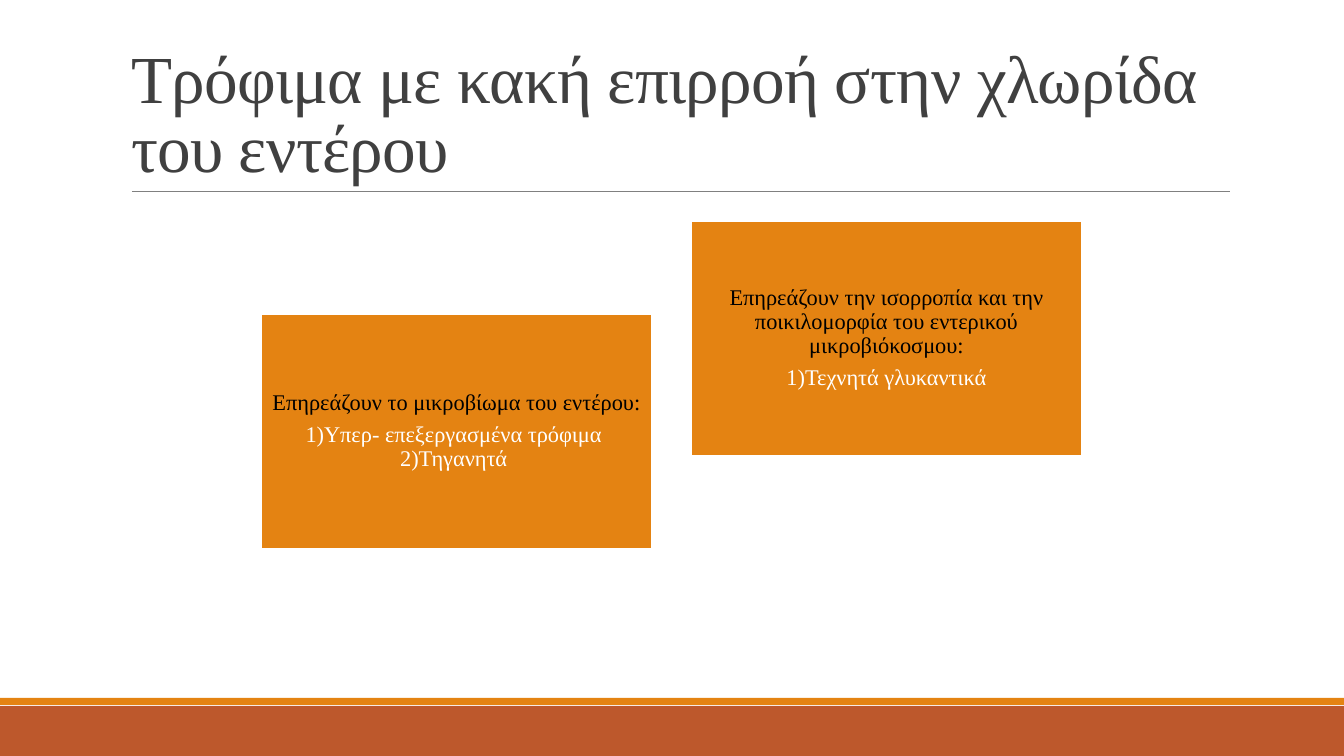
from pptx import Presentation
from pptx.dml.color import RGBColor
from pptx.enum.shapes import MSO_CONNECTOR, MSO_SHAPE
from pptx.enum.text import MSO_ANCHOR, MSO_AUTO_SIZE, PP_ALIGN
from pptx.oxml.ns import qn
from pptx.util import Emu, Pt

WIDTH, HEIGHT = 1344, 756
FONT = "Times New Roman"
ORANGE, RUST, WHITE, BLACK = "E48312", "BD582C", "FFFFFF", "000000"
CARD_WIDTH, CARD_HEIGHT, CARD_INSET = 391, 235, 7
TITLE = "Τρόφιμα με κακή επιρροή στην χλωρίδα του εντέρου"
CARDS = [
    (261, 314, "Επηρεάζουν το μικροβίωμα του εντέρου:",
     "1)Υπερ- επεξεργασμένα τρόφιμα \n2)Τηγανητά "),
    (691, 221, "Επηρεάζουν την ισορροπία και την ποικιλομορφία του εντερικού μικροβιόκοσμου:",
     "1)Τεχνητά γλυκαντικά"),
]


def px(length):
    return Emu(round(length * 12192000 / WIDTH))


def color(value):
    return RGBColor.from_string(value)


def apply(target, values):
    for name, value in values.items():
        setattr(target, name, value)


class SlideBuilder:
    def __init__(self, presentation, font):
        self.font = font
        self.slide = presentation.slides.add_slide(presentation.slide_layouts[5])

    def fill_paragraph(self, paragraph, text, size, text_color, spacing=0, **layout):
        """Set text and format; spacing between letters is in hundredths of a point."""
        paragraph.text = text
        apply(paragraph, layout)
        for run in paragraph.runs:
            apply(run.font, {"name": self.font, "size": Pt(size)})
            run.font.color.rgb = color(text_color)
            if spacing:
                run._r.get_or_add_rPr().set("spc", str(spacing))

    def title(self, left, top, width, height, text):
        shape = self.slide.shapes.title
        apply(shape, {"left": px(left), "top": px(top),
                      "width": px(width), "height": px(height)})
        apply(shape.text_frame, {"word_wrap": True, "auto_size": MSO_AUTO_SIZE.NONE,
                                 "vertical_anchor": MSO_ANCHOR.BOTTOM})
        self.fill_paragraph(shape.text_frame.paragraphs[0], text, 48, "404040", spacing=-50,
                            alignment=PP_ALIGN.LEFT, line_spacing=0.85)

    def rectangle(self, left, top, width, height, fill, outline=None):
        shape = self.slide.shapes.add_shape(
            MSO_SHAPE.RECTANGLE, px(left), px(top), px(width), px(height))
        shape.shadow.inherit = False
        shape.fill.solid()
        shape.fill.fore_color.rgb = color(fill)
        if outline:
            shape.line.color.rgb = color(outline)
            shape.line.width = Pt(1.25)
        else:
            shape.line.fill.background()
        return shape

    def rule(self, left, right, top):
        line = self.slide.shapes.add_connector(
            MSO_CONNECTOR.STRAIGHT, px(left), px(top), px(right), px(top))
        line.line.color.rgb = color("808080")
        line.line.width = Pt(0.5)
        properties = line._element.spPr
        properties.append(properties.makeelement(qn("a:effectLst"), {}))

    def card(self, left, top, heading, foods):
        shape = self.rectangle(left, top, CARD_WIDTH, CARD_HEIGHT, ORANGE, WHITE)
        frame = shape.text_frame
        apply(frame, {"word_wrap": True, "vertical_anchor": MSO_ANCHOR.MIDDLE})
        apply(frame, {f"margin_{side}": px(CARD_INSET)
                      for side in ("left", "top", "right", "bottom")})
        layout = {"alignment": PP_ALIGN.CENTER, "line_spacing": 0.9, "space_after": Pt(5.6)}
        self.fill_paragraph(frame.paragraphs[0], heading, 16, BLACK, **layout)
        self.fill_paragraph(frame.add_paragraph(), foods, 16, WHITE, **layout)


def main():
    presentation = Presentation()
    apply(presentation, {"slide_width": px(WIDTH), "slide_height": px(HEIGHT)})
    builder = SlideBuilder(presentation, FONT)
    builder.rectangle(0, 706, WIDTH, 50, RUST)
    builder.rectangle(0, 698, WIDTH, 7, ORANGE)
    builder.rule(132, 1230, 191)
    builder.title(121, 31, 1109, 160, TITLE)
    for card in CARDS:
        builder.card(*card)
    presentation.save("out.pptx")


if __name__ == "__main__":
    main()
